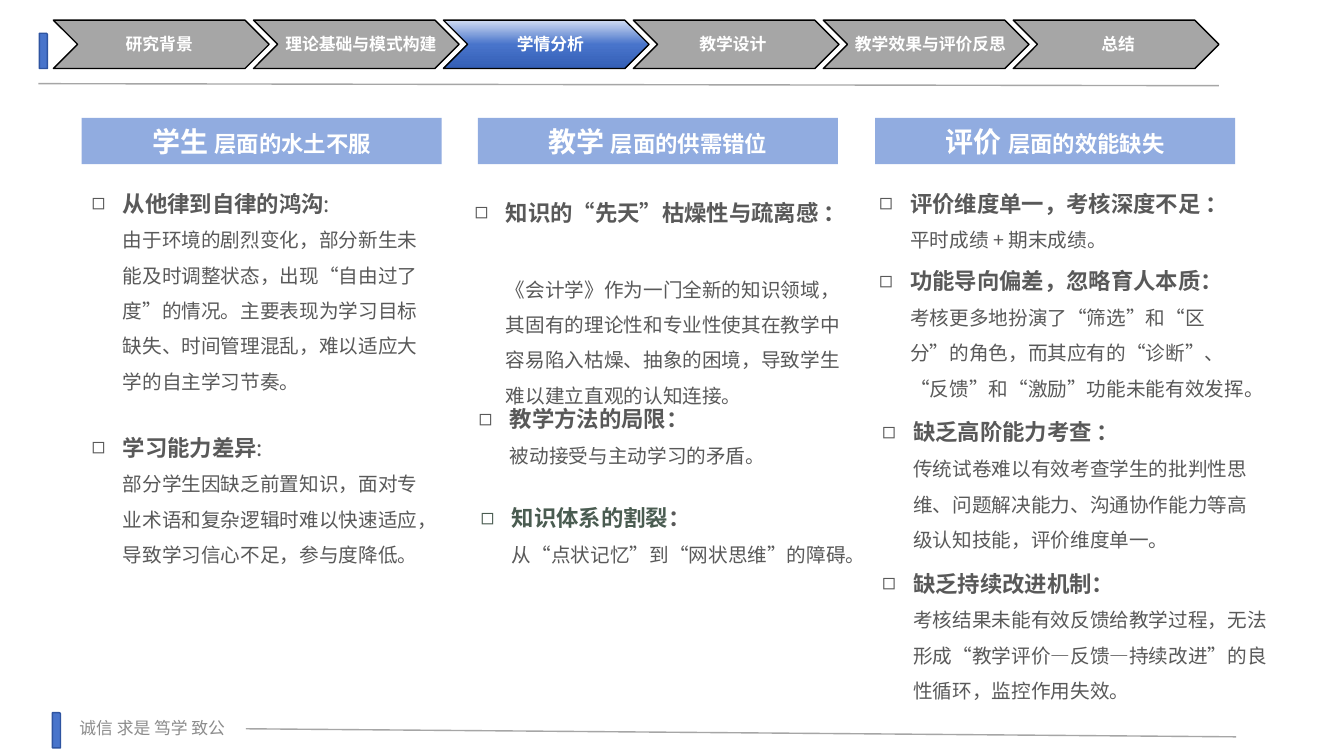
from copy import deepcopy
from dataclasses import dataclass

from lxml.etree import SubElement
from pptx import Presentation
from pptx.dml.color import RGBColor
from pptx.enum.lang import MSO_LANGUAGE_ID
from pptx.enum.shapes import MSO_CONNECTOR, MSO_SHAPE
from pptx.enum.text import MSO_ANCHOR, MSO_AUTO_SIZE, PP_ALIGN
from pptx.oxml.ns import qn
from pptx.util import Inches, Pt


@dataclass(frozen=True)
class Theme:
    blue: str = "4874CB"
    blue_edge: str = "2E54A1"
    active: tuple = ((0, "D1DCF2"), (0.5, "4874CB"), (1, "345FB6"))
    banner: str = "91ACE0"
    grey: str = "A6A6A6"
    motto: str = "8C8C8C"
    text: str = "595959"
    green: str = "4A5C51"
    white: str = "FFFFFF"
    black: str = "000000"
    small: int = 12
    body: int = 14
    heading: int = 16
    title: int = 20
    cjk: str = "Noto Sans CJK SC"
    latin: str = "Arial"


class SlideBuilder:
    def __init__(self, slide, theme):
        self.s = slide
        self.t = theme

    def format_run(self, r, size, color, bold=False, font=None):
        r.font.size = Pt(size)
        r.font.bold = bold
        r.font.name = font or self.t.cjk
        r.font.color.rgb = RGBColor.from_string(color)
        r.font.language_id = MSO_LANGUAGE_ID.SIMPLIFIED_CHINESE
        ea = SubElement(r.font._element, qn("a:ea"))
        ea.set("typeface", self.t.cjk)

    def add_run(self, p, text, *style):
        r = p.add_run()
        r.text = text
        self.format_run(r, *style)

    def shape(self, kind, x, y, w, h, fill, line=None):
        sp = self.s.shapes.add_shape(kind, Inches(x), Inches(y), Inches(w), Inches(h))
        sp.shadow.inherit = False
        if isinstance(fill, str):
            sp.fill.solid()
            sp.fill.fore_color.rgb = RGBColor.from_string(fill)
        else:
            self.gradient(sp, fill)
        if line:
            sp.line.color.rgb = RGBColor.from_string(line)
            sp.line.width = Pt(1)
        else:
            sp.line.fill.background()
        return sp

    def gradient(self, sp, stops):
        sp.fill.gradient()
        sp.fill.gradient_angle = 270
        gs_list = sp._element.spPr.find(".//" + qn("a:gsLst"))
        while len(gs_list) < len(stops):
            gs_list.append(deepcopy(gs_list[-1]))
        for stop, (position, color) in zip(sp.fill.gradient_stops, stops):
            stop.position = position
            stop.color.rgb = RGBColor.from_string(color)

    def marker(self, x, y):
        self.shape(MSO_SHAPE.ROUND_1_RECTANGLE, x, y, 0.08, 0.35,
                   self.t.blue, self.t.blue_edge)

    def rule(self, x1, y1, x2, y2):
        line = self.s.shapes.add_connector(
            MSO_CONNECTOR.STRAIGHT, Inches(x1), Inches(y1), Inches(x2), Inches(y2))
        line.line.color.rgb = RGBColor.from_string(self.t.grey)
        line.line.width = Pt(1)
        SubElement(line._element.spPr, qn("a:effectLst"))

    def textbox(self, x, y, w, h):
        tf = self.s.shapes.add_textbox(Inches(x), Inches(y), Inches(w), Inches(h)).text_frame
        tf.word_wrap = True
        tf.auto_size = MSO_AUTO_SIZE.SHAPE_TO_FIT_TEXT
        return tf

    def label(self, text, x, y, w, color, bold=False, align=PP_ALIGN.LEFT):
        tf = self.textbox(x, y, w, 0.3)
        if align == PP_ALIGN.CENTER:
            tf.margin_left = tf.margin_right = 0
        tf.text = text
        p = tf.paragraphs[0]
        p.alignment = align
        self.format_run(p.runs[0], self.t.small, color, bold, self.t.latin)

    def banner(self, subject, topic, x):
        sp = self.shape(MSO_SHAPE.RECTANGLE, x, 1.17, 3.57, 0.46, self.t.banner)
        tf = sp.text_frame
        tf.word_wrap = True
        tf.vertical_anchor = MSO_ANCHOR.MIDDLE
        p = tf.paragraphs[0]
        p.alignment = PP_ALIGN.CENTER
        self.add_run(p, subject + " ", self.t.title, self.t.white, True)
        self.add_run(p, topic, self.t.heading, self.t.white, True)

    def point(self, x, y, w, h, heading, colon, body, color=None):
        t = self.t
        p = self.textbox(x, y, w, h).paragraphs[0]
        pPr = p._p.get_or_add_pPr()
        pPr.set("marL", str(Inches(0.31)))
        pPr.set("indent", str(Inches(-0.31)))
        SubElement(pPr, qn("a:buFont")).set("typeface", t.latin)
        SubElement(pPr, qn("a:buChar")).set("char", "◻")
        p.line_spacing = 1.5
        self.add_run(p, heading, t.heading, color or t.text, True)
        self.add_run(p, colon, t.heading, t.text, colon != ":")
        p.add_line_break()
        # The break keeps the heading size
        SubElement(p._p.find(qn("a:br")), qn("a:rPr")).set("sz", str(t.heading * 100))
        self.add_run(p, body, t.body, t.text)


# Section name and left edge of its label
SECTIONS = [("研究背景", 0.73), ("理论基础与模式构建", 2.73), ("学情分析", 4.61),
            ("教学设计", 6.42), ("教学效果与评价反思", 8.38), ("总结", 10.24)]
CURRENT = "学情分析"

BANNERS = [("学生", "层面的水土不服", 0.81), ("教学", "层面的供需错位", 4.74),
           ("评价", "层面的效能缺失", 8.68)]

# Left, top, width, height, heading, colon, body
POINTS = [
    (0.81, 1.7, 3.57, 2.27, "从他律到自律的鸿沟", ":",
     "由于环境的剧烈变化，部分新生未能及时调整状态，出现“自由过了度”的情况。"
     "主要表现为学习目标缺失、时间管理混乱，难以适应大学的自主学习节奏。"),
    (0.81, 4.12, 3.57, 1.92, "学习能力差异", ":",
     "部分学生因缺乏前置知识，面对专业术语和复杂逻辑时难以快速适应，"
     "导致学习信心不足，参与度降低。"),
    (4.61, 1.79, 3.83, 1.92, "知识的“先天”枯燥性与疏离感", " ：",
     "《会计学》作为一门全新的知识领域，其固有的理论性和专业性使其在教学中"
     "容易陷入枯燥、抽象的困境，导致学生难以建立直观的认知连接。"),
    (4.65, 3.84, 3.83, 0.86, "教学方法的局限", "：", "被动接受与主动学习的矛盾。"),
    (4.67, 4.82, 3.83, 0.86, "知识体系的割裂", "：",
     "从“点状记忆”到“网状思维”的障碍。", Theme.green),
    (8.62, 1.7, 3.83, 0.86, "评价维度单一，考核深度不足", " ：", "平时成绩 + 期末成绩。"),
    (8.62, 2.47, 3.83, 1.56, "功能导向偏差，忽略育人本质", "：",
     "考核更多地扮演了“筛选”和“区分”的角色，而其应有的“诊断”、"
     "“反馈”和“激励”功能未能有效发挥。"),
    (8.65, 3.97, 3.83, 1.56, "缺乏高阶能力考查", " ：",
     "传统试卷难以有效考查学生的批判性思维、问题解决能力、沟通协作能力等"
     "高级认知技能，评价维度单一。"),
    (8.65, 5.47, 4.17, 1.56, "缺乏持续改进机制", "：",
     "考核结果未能有效反馈给教学过程，无法形成“教学评价—反馈—持续改进”的"
     "良性循环，监控作用失效。"),
]


def main():
    prs = Presentation()
    prs.slide_width, prs.slide_height = Inches(13.33), Inches(7.5)
    theme = Theme()
    page = SlideBuilder(prs.slides.add_slide(prs.slide_layouts[6]), theme)

    # Navigation bar: equal pitch, the first chevron starts further left
    page.marker(0.39, 0.33)
    for i, (name, label_x) in enumerate(SECTIONS):
        right = 2.67 + 1.884 * i
        width = 2.04 if i else 2.14
        fill = theme.active if name == CURRENT else theme.grey
        page.shape(MSO_SHAPE.CHEVRON, right - width, 0.2, width, 0.48, fill, theme.black)
        page.label(name, label_x, 0.29, 1.7, theme.white, True, PP_ALIGN.CENTER)
    page.rule(0.38, 0.83, 12.09, 0.85)

    # Footer
    page.marker(0.52, 7.07)
    page.label("诚信 求是 笃学 致公", 0.69, 7.07, 2.9, theme.motto)
    page.rule(2.44, 7.23, 12.26, 7.31)

    # Three columns
    for banner in BANNERS:
        page.banner(*banner[:2], x=banner[2])
    for point in POINTS:
        page.point(*point)

    prs.save("out.pptx")


if __name__ == "__main__":
    main()
